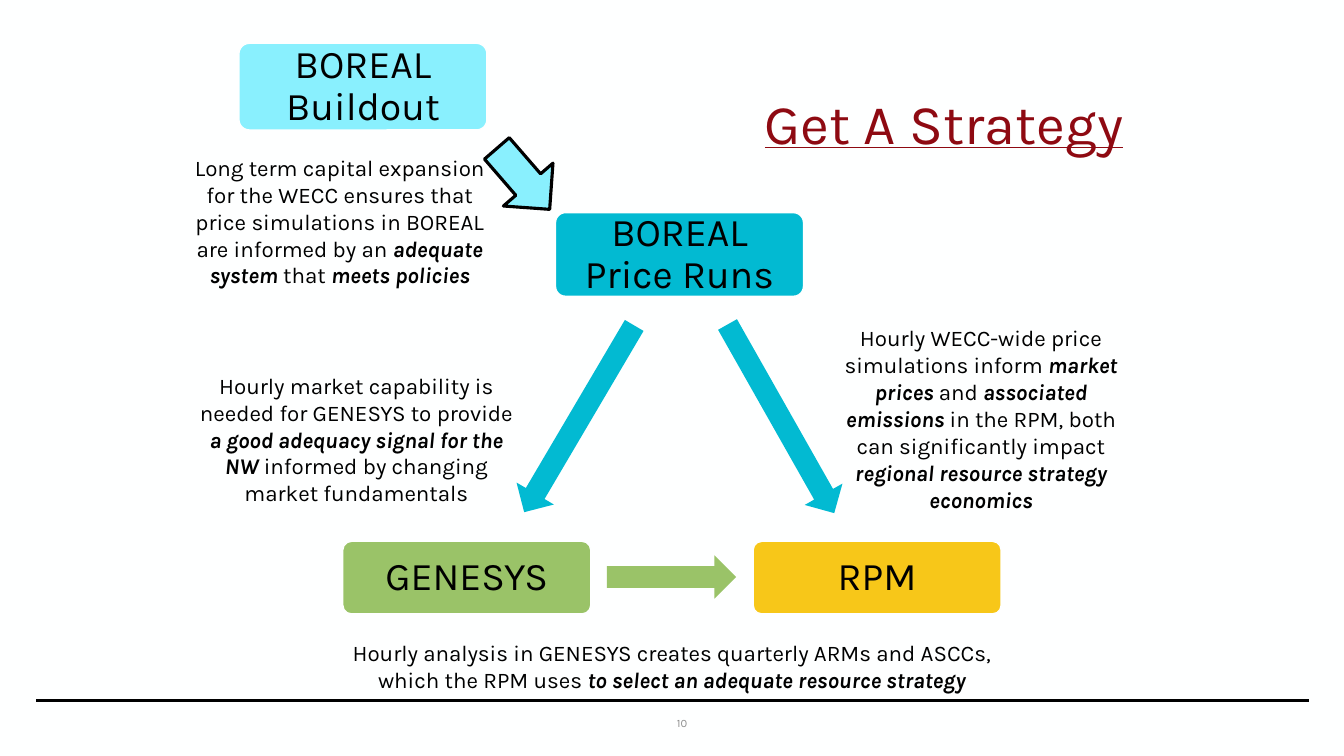
from lxml import etree
from pptx import Presentation
from pptx.dml.color import RGBColor
from pptx.enum.shapes import MSO_CONNECTOR, MSO_SHAPE
from pptx.enum.text import MSO_ANCHOR, PP_ALIGN
from pptx.oxml.ns import qn
from pptx.util import Inches, Pt

FONT = "Karla"
BLACK = RGBColor(0x00, 0x00, 0x00)
PAPER = RGBColor(0xFE, 0xFF, 0xFF)
GREY = RGBColor(0x8C, 0x8C, 0x8C)
MAROON = RGBColor(0x8E, 0x0A, 0x12)
AQUA = RGBColor(0x89, 0xF0, 0xFE)
TEAL = RGBColor(0x02, 0xBA, 0xD2)
GREEN = RGBColor(0x9A, 0xC3, 0x68)
YELLOW = RGBColor(0xF7, 0xC7, 0x19)

MODEL_WIDTH = 2.46
MODELS = [  # label, left, top, height, colour
    ("BOREAL Buildout", 2.37, 0.43, 0.86, AQUA),
    ("BOREAL Price Runs", 5.51, 2.11, 0.83, TEAL),
    ("GENESYS", 3.4, 5.37, 0.72, GREEN),
    ("RPM", 7.47, 5.37, 0.72, YELLOW),
]
ARROWS = [  # preset, box, rotation, colour, outline width
    (MSO_SHAPE.RIGHT_ARROW, (4.79, 1.45, 0.8, 0.65), 49.1, AQUA, 2.25),
    (MSO_SHAPE.LEFT_ARROW, (4.67, 3.94, 2.15, 0.43), 300.5, TEAL, None),
    (MSO_SHAPE.LEFT_ARROW, (6.67, 3.94, 2.15, 0.43), 240.5, TEAL, None),
    (MSO_SHAPE.RIGHT_ARROW, (6.02, 5.51, 1.28, 0.43), 0, GREEN, None),
]
# Spans alternate between plain and emphasised
NOTES = [
    ((1.81, 1.48, 3.12, 1.72),
     ["Long term capital expansion for the WECC ensures that price simulations "
      "in BOREAL are informed by an ", "adequate system ", "that ", "meets policies"]),
    ((1.81, 3.64, 3.45, 1.45),
     ["Hourly market capability is needed for GENESYS to provide ",
      "a good adequacy signal for the NW ", "informed by changing market fundamentals"]),
    ((8.13, 3.17, 3.2, 1.99),
     ["Hourly WECC-wide price simulations inform ", "market prices ", "and",
      " associated emissions ", "in the RPM, both can significantly impact ",
      "regional resource strategy economics"]),
    ((3.34, 6.29, 6.65, 0.64),
     ["Hourly analysis in GENESYS creates quarterly ARMs and ASCCs, which the RPM uses ",
      "to select an adequate resource strategy"]),
]


def write(frame, spans, size, color=BLACK, anchor=MSO_ANCHOR.MIDDLE):
    frame.word_wrap = True
    frame.vertical_anchor = anchor
    para = frame.paragraphs[0]
    para.alignment = PP_ALIGN.CENTER
    para.font.name, para.font.size = FONT, Pt(size)
    para.font.color.rgb = color
    for index, text in enumerate(spans):
        span = para.add_run()
        span.text = text
        if index % 2:
            span.font.bold = span.font.italic = True
    return para


def add_text(page, box, spans, size, **style):
    frame = page.shapes.add_textbox(*map(Inches, box)).text_frame
    return write(frame, spans, size, **style)


def add_filled(page, preset, box, fill, line=None, width=1):
    shape = page.shapes.add_shape(preset, *map(Inches, box))
    shape.shadow.inherit = False
    shape.fill.solid()
    shape.fill.fore_color.rgb = fill
    if line is None:
        shape.line.fill.background()
    else:
        shape.line.color.rgb = line
        shape.line.width = Pt(width)
    return shape


def add_model(page, label, left, top, height, fill):
    box = (left, top, MODEL_WIDTH, height)
    shape = add_filled(page, MSO_SHAPE.ROUNDED_RECTANGLE, box, fill, PAPER)
    shape.adjustments[0] = 0.12
    frame = shape.text_frame
    frame.margin_left = frame.margin_right = Inches(0.19)
    frame.margin_top = frame.margin_bottom = Inches(0.19)
    write(frame, [label], 28).line_spacing = 0.9


def add_arrow(page, preset, box, rotation, fill, width):
    line = BLACK if width else None
    add_filled(page, preset, box, fill, line, width).rotation = rotation


def add_footer(page, left, right, top):
    rule = page.shapes.add_connector(
        MSO_CONNECTOR.STRAIGHT, Inches(left), Inches(top), Inches(right), Inches(top))
    rule.line.color.rgb = BLACK
    rule.line.width = Pt(2.5)
    etree.SubElement(rule._element.spPr, qn("a:effectLst"))
    add_text(page, (6.38, top + 0.07, 0.77, 0.3), ["10"], 8, color=GREY)


def add_strategy_page(deck):
    page = deck.slides.add_slide(deck.slide_layouts[6])
    page.background.fill.solid()
    page.background.fill.fore_color.rgb = PAPER
    add_footer(page, 0.36, 12.98, 6.95)

    # Title
    title = add_text(page, (7.03, 0.75, 4.67, 1), ["Get A Strategy"], 40, color=MAROON)
    title.line_spacing = 0.9
    title.font.underline = True

    # Flow of models
    for model in MODELS:
        add_model(page, *model)
    for arrow in ARROWS:
        add_arrow(page, *arrow)

    # Explanations
    for box, spans in NOTES:
        add_text(page, box, spans, 16, anchor=MSO_ANCHOR.TOP)


def main():
    deck = Presentation()
    deck.slide_width, deck.slide_height = Inches(13.33), Inches(7.5)
    add_strategy_page(deck)
    deck.save("out.pptx")


if __name__ == "__main__":
    main()
